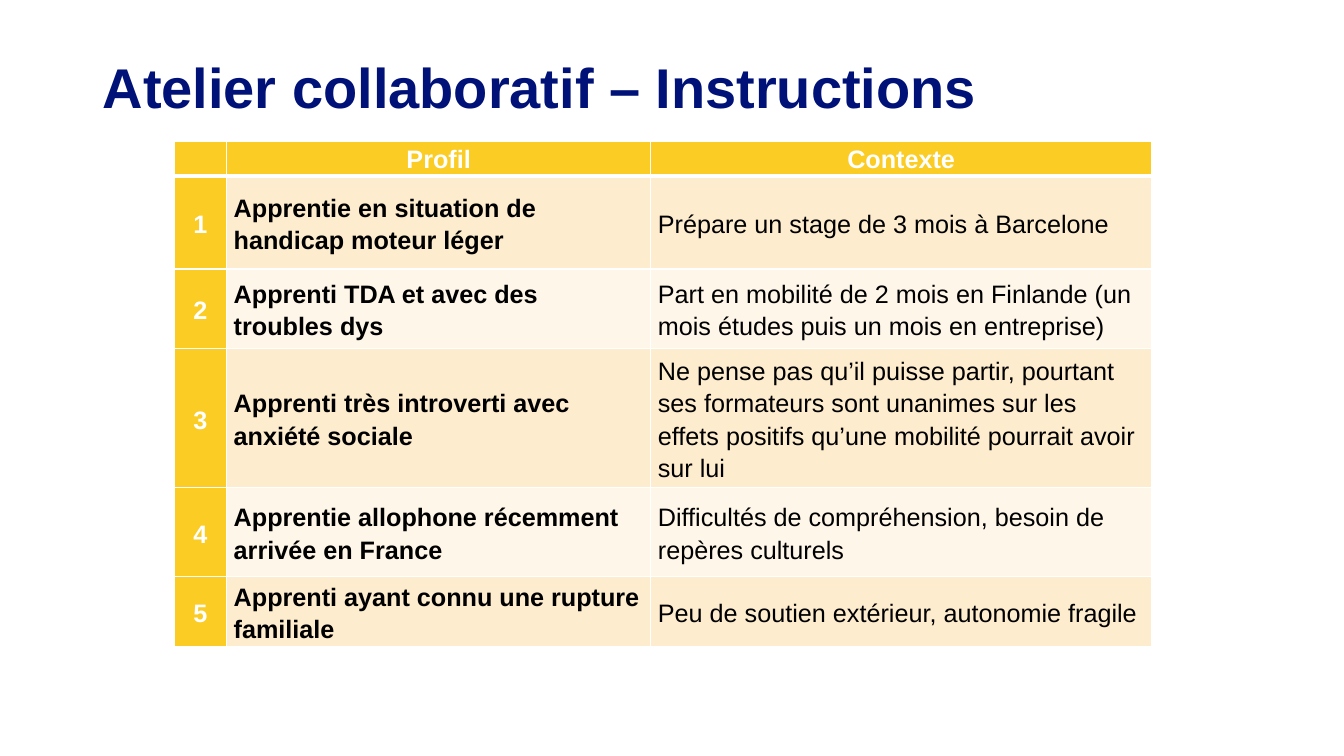
from lxml.etree import SubElement
from pptx import Presentation
from pptx.dml.color import RGBColor as Color
from pptx.enum.text import MSO_ANCHOR as Anchor, PP_ALIGN as Align
from pptx.oxml.ns import qn
from pptx.util import Cm, Pt

TITLE = "Atelier collaboratif – Instructions"
HEADER = ("", "Profil", "Contexte")
PROFILES = [
    ("Apprentie en situation de handicap moteur léger",
     "Prépare un stage de 3 mois à Barcelone"),
    ("Apprenti TDA et avec des troubles dys",
     "Part en mobilité de 2 mois en Finlande (un mois études puis un mois en entreprise)"),
    ("Apprenti très introverti avec anxiété sociale",
     "Ne pense pas qu’il puisse partir, pourtant ses formateurs sont unanimes "
     "sur les effets positifs qu’une mobilité pourrait avoir sur lui"),
    ("Apprentie allophone récemment arrivée en France",
     "Difficultés de compréhension, besoin de repères culturels"),
    ("Apprenti ayant connu une rupture familiale",
     "Peu de soutien extérieur, autonomie fragile"),
]
THEME = {
    "font": "Arial", "title_size": 40, "table_size": 18,
    "navy": "001277", "gold": "FBCC23", "white": "FFFFFF", "black": "000000",
    "bands": ("FDECCD", "FEF6E8"), "thin": 1, "thick": 3,
}
TITLE_AREA = (2.34, 1.02, 29.21, 2.54)
TABLE_ORIGIN = (4.39, 3.56)
COLUMN_WIDTHS = (1.32, 10.69, 12.62)
ROW_HEIGHTS = (0.64, 2.34, 2.01, 3.4, 2.24, 1.68)


def apply(target, values):
    for name, value in values.items():
        setattr(target, name, value)


def write(frame, text, size, color, bold, paragraph_format):
    para = frame.paragraphs[0]
    apply(para, paragraph_format)
    if text:
        span = para.add_run()
        span.text = text
        apply(span.font, {"name": THEME["font"], "size": Pt(size), "bold": bold})
        span.font.color.rgb = Color.from_string(color)


def add_borders(cell, widths):
    properties = cell._tc.get_or_add_tcPr()
    for side, width in widths.items():
        line = SubElement(properties, qn(f"a:ln{side}"), w=str(Pt(width)))
        fill = SubElement(line, qn("a:solidFill"))
        SubElement(fill, qn("a:srgbClr"), val=THEME["white"])


def add_title(page):
    box = page.shapes.add_textbox(*map(Cm, TITLE_AREA))
    apply(box.text_frame, {"word_wrap": True, "vertical_anchor": Anchor.MIDDLE})
    write(box.text_frame, TITLE, THEME["title_size"], THEME["navy"], True,
          {"line_spacing": 0.9})


def format_cell(cell, text, row, column):
    heading = row == 0 or column == 0
    apply(cell, {
        "margin_left": Cm(0.18), "margin_right": Cm(0.18),
        "margin_top": 0, "margin_bottom": 0,
        "vertical_anchor": Anchor.TOP if row == 0 else Anchor.MIDDLE,
    })
    thin, thick = THEME["thin"], THEME["thick"]
    add_borders(cell, {"L": thin, "R": thin,
                       "T": thick if row == 1 else thin,
                       "B": thick if row == 0 else thin})
    cell.fill.solid()
    background = THEME["gold"] if heading else THEME["bands"][(row - 1) % 2]
    cell.fill.fore_color.rgb = Color.from_string(background)
    write(cell.text_frame, text, THEME["table_size"],
          THEME["white"] if heading else THEME["black"],
          heading or column == 1,
          {"alignment": Align.CENTER if heading else Align.LEFT,
           "line_spacing": 1.15, "space_after": Pt(10)})


def add_profiles(page):
    rows = [HEADER] + [(str(number), *profile)
                       for number, profile in enumerate(PROFILES, 1)]
    size = (sum(COLUMN_WIDTHS), sum(ROW_HEIGHTS))
    table = page.shapes.add_table(len(rows), len(HEADER),
                                  *map(Cm, TABLE_ORIGIN + size)).table
    for column, width in zip(table.columns, COLUMN_WIDTHS):
        column.width = Cm(width)
    for row, height in zip(table.rows, ROW_HEIGHTS):
        row.height = Cm(height)
    for row, texts in enumerate(rows):
        for column, text in enumerate(texts):
            format_cell(table.cell(row, column), text, row, column)


def main():
    deck = Presentation()
    apply(deck, {"slide_width": Cm(33.87), "slide_height": Cm(19.05)})
    page = deck.slides.add_slide(deck.slide_layouts[6])
    add_title(page)
    add_profiles(page)
    deck.save("out.pptx")


if __name__ == "__main__":
    main()
